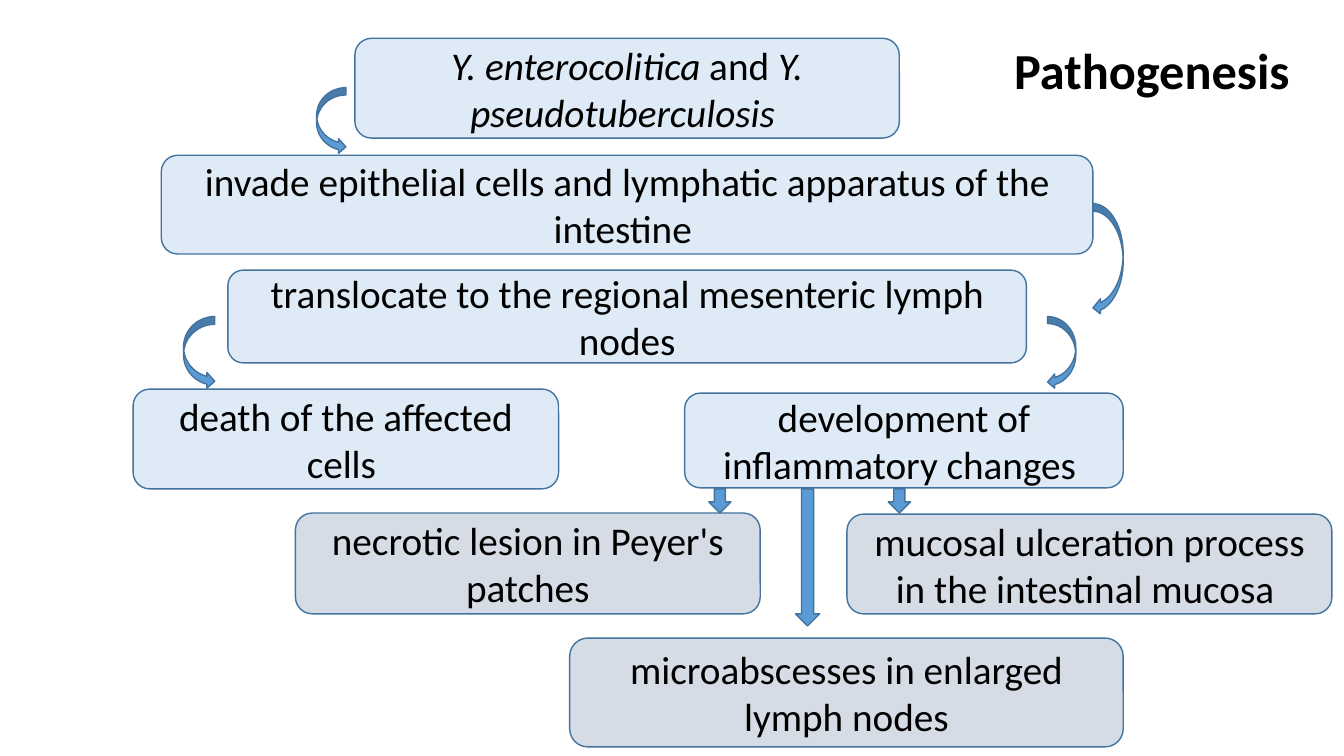
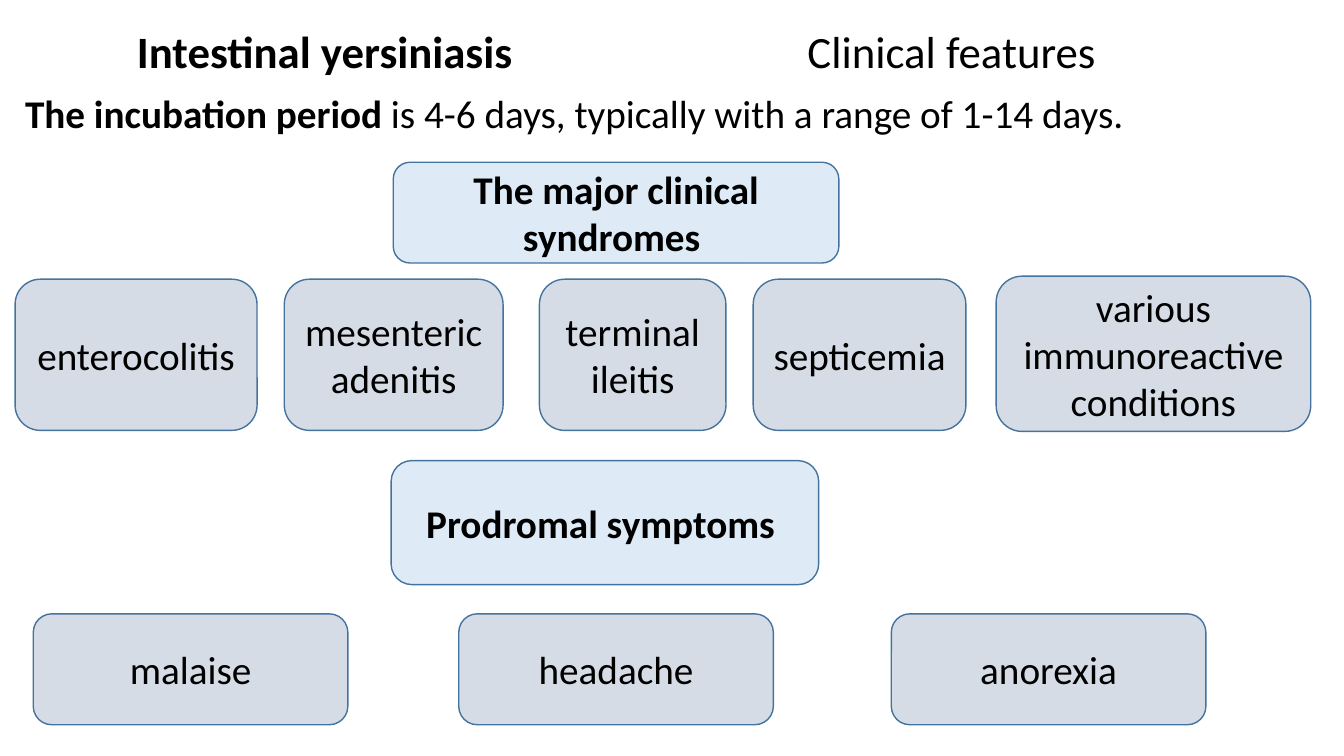
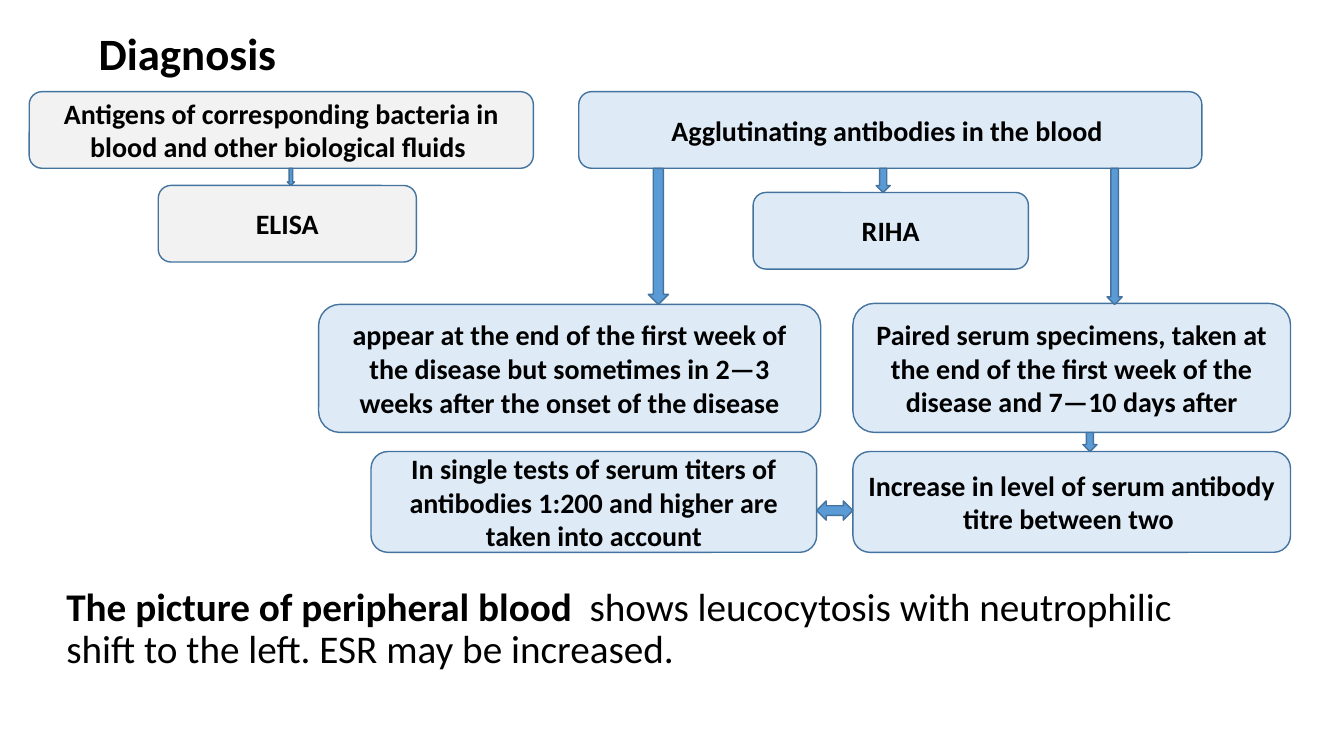
import pptx
import pptx.dml.color
import pptx.enum.shapes
import pptx.enum.text
import pptx.util

RGBColor = pptx.dml.color.RGBColor
SHAPE = pptx.enum.shapes.MSO_SHAPE
ALIGN = pptx.enum.text.PP_ALIGN
ANCHOR = pptx.enum.text.MSO_ANCHOR
Pt = pptx.util.Pt

EMU_PER_PX = 9144
SLIDE_WIDTH, SLIDE_HEIGHT = 1333, 750

BLACK = RGBColor(0x00, 0x00, 0x00)
PALE_BLUE = RGBColor(0xDE, 0xEB, 0xF7)
GREY_BLUE = RGBColor(0xD6, 0xDC, 0xE5)
PALE_GREY = RGBColor(0xF2, 0xF2, 0xF2)
ARROW_BLUE = RGBColor(0x5B, 0x9B, 0xD5)
OUTLINE_BLUE = RGBColor(0x43, 0x73, 0x9E)

PLAIN = {"name": "Calibri", "size": Pt(28), "bold": False, "italic": False}
BOLD = {**PLAIN, "bold": True}
ITALIC = {**PLAIN, "italic": True}
LABEL = {**BOLD, "size": Pt(20)}
TITLE = {**BOLD, "size": Pt(32)}
SUBTITLE = {**PLAIN, "size": Pt(32)}
LARGE_TITLE = {**BOLD, "size": Pt(36)}


def px(*lengths):
    return [pptx.util.Emu(length * EMU_PER_PX) for length in lengths]


def apply_format(target, values):
    for attribute, value in values.items():
        setattr(target, attribute, value)


def write(frame, runs, anchor, paragraph_format):
    apply_format(frame, {"word_wrap": True, "vertical_anchor": anchor})
    paragraph = frame.paragraphs[0]
    apply_format(paragraph, paragraph_format)
    for text, font_format in runs:
        run = paragraph.add_run()
        run.text = text
        apply_format(run.font, font_format)
        run.font.color.rgb = BLACK


def add_text(slide, area, runs, anchor=ANCHOR.TOP, align=ALIGN.LEFT):
    frame = slide.shapes.add_textbox(*px(*area)).text_frame
    write(frame, runs, anchor, {"alignment": align, "line_spacing": 0.9})


def add_title(slide, area, text, font_format=TITLE, align=ALIGN.LEFT):
    add_text(slide, area, [(text, font_format)], ANCHOR.MIDDLE, align)


def add_outlined(slide, preset, area, fill):
    outlined = slide.shapes.add_shape(preset, *px(*area))
    outlined.shadow.inherit = False
    outlined.fill.solid()
    outlined.fill.fore_color.rgb = fill
    outlined.line.color.rgb = OUTLINE_BLUE
    outlined.line.width = Pt(1)
    return outlined


def add_box(slide, area, fill, *runs):
    box = add_outlined(slide, SHAPE.ROUNDED_RECTANGLE, area, fill)
    write(box.text_frame, runs, ANCHOR.MIDDLE, {"alignment": ALIGN.CENTER})


def add_boxes(slide, fill, font_format, boxes):
    for area, text in boxes:
        add_box(slide, area, fill, (text, font_format))


def add_arrows(slide, preset, areas):
    for area in areas:
        add_outlined(slide, preset, area, ARROW_BLUE)


def build_pathogenesis(slide):
    add_title(slide, (139, 0, 1150, 145), "Pathogenesis", LARGE_TITLE, ALIGN.RIGHT)
    add_box(slide, (352, 38, 540, 99), PALE_BLUE,
            ("Y. enterocolitica", ITALIC), (" and ", PLAIN),
            ("Y. pseudotuberculosis ", ITALIC))
    add_boxes(slide, PALE_BLUE, PLAIN, [
        ((160, 154, 924, 98),
         "invade epithelial cells and lymphatic apparatus of the intestine "),
        ((226, 268, 792, 92), "translocate to the regional mesenteric lymph nodes"),
        ((679, 390, 435, 94), "development of inflammatory changes "),
        ((132, 386, 422, 99), "death of the affected cells "),
    ])
    add_boxes(slide, GREY_BLUE, PLAIN, [
        ((293, 509, 461, 100), "necrotic lesion in Peyer's patches"),
        ((565, 633, 549, 108), "microabscesses in enlarged lymph nodes"),
        ((840, 510, 481, 99), "mucosal ulceration process in the intestinal mucosa "),
    ])
    add_arrows(slide, SHAPE.CURVED_RIGHT_ARROW,
               [(314, 87, 29, 66), (182, 314, 31, 72)])
    add_arrows(slide, SHAPE.CURVED_LEFT_ARROW,
               [(1084, 202, 30, 111), (1039, 314, 28, 72)])
    add_arrows(slide, SHAPE.DOWN_ARROW,
               [(789, 485, 24, 136), (881, 485, 22, 24), (703, 485, 22, 24)])


def build_clinical_features(slide):
    add_title(slide, (126, 12, 560, 84), "Intestinal yersiniasis")
    add_title(slide, (791, 12, 485, 84), "Clinical features", SUBTITLE)
    add_text(slide, (15, 89, 1226, 60), [
        ("The incubation period ", BOLD),
        ("is 4-6 days, typically with a range of 1-14 days.", PLAIN),
    ])
    add_boxes(slide, PALE_BLUE, BOLD, [
        ((390, 161, 442, 100), "The major clinical syndromes "),
        ((388, 457, 424, 123), "Prodromal symptoms "),
    ])
    add_boxes(slide, GREY_BLUE, PLAIN, [
        ((15, 277, 240, 150), "enterocolitis"),
        ((282, 277, 217, 150), "mesenteric adenitis"),
        ((535, 277, 185, 150), "terminal ileitis"),
        ((747, 277, 211, 150), "septicemia"),
        ((988, 274, 312, 154), "various immunoreactive conditions"),
    ])
    symptoms = [(33, "malaise"), (455, "headache"), (884, "anorexia")]
    add_boxes(slide, GREY_BLUE, PLAIN,
              [((left, 609, 312, 110), symptom) for left, symptom in symptoms])


def build_diagnosis(slide):
    add_title(slide, (88, 19, 1148, 73), "Diagnosis")
    add_boxes(slide, PALE_GREY, LABEL, [
        ((29, 91, 500, 76),
         "Antigens of corresponding bacteria in blood and other biological fluids "),
        ((157, 184, 256, 76), "ELISA"),
    ])
    add_boxes(slide, PALE_BLUE, LABEL, [
        ((574, 91, 618, 76), "Agglutinating antibodies in the blood "),
        ((747, 191, 273, 76), "RIHA"),
        ((316, 302, 498, 127),
         "appear at the end of the first week of the disease "
         "but sometimes in 2—3 weeks after the onset of the disease"),
        ((846, 301, 434, 128),
         "Paired serum specimens, taken at the end of the first week "
         "of the disease and 7—10 days after"),
        ((846, 448, 434, 100),
         "Increase in level of serum antibody titre between two "),
        ((368, 448, 442, 100),
         "In single tests of serum titers of antibodies 1:200 and higher "
         "are taken into account"),
    ])
    add_arrows(slide, SHAPE.DOWN_ARROW, [
        (643, 167, 20, 135), (1098, 167, 15, 135), (285, 167, 7, 17),
        (869, 167, 14, 24), (1074, 429, 14, 19),
    ])
    add_arrows(slide, SHAPE.LEFT_RIGHT_ARROW, [(810, 497, 36, 19)])
    add_text(slide, (56, 578, 1150, 106), [
        ("The picture of peripheral blood  ", BOLD),
        ("shows leucocytosis with neutrophilic shift to the left. "
         "ESR may be increased.", PLAIN),
    ])


def main():
    deck = pptx.Presentation()
    deck.slide_width, deck.slide_height = px(SLIDE_WIDTH, SLIDE_HEIGHT)
    blank = deck.slide_layouts[6]
    for build in (build_pathogenesis, build_clinical_features, build_diagnosis):
        build(deck.slides.add_slide(blank))
    deck.save("out.pptx")


if __name__ == "__main__":
    main()
